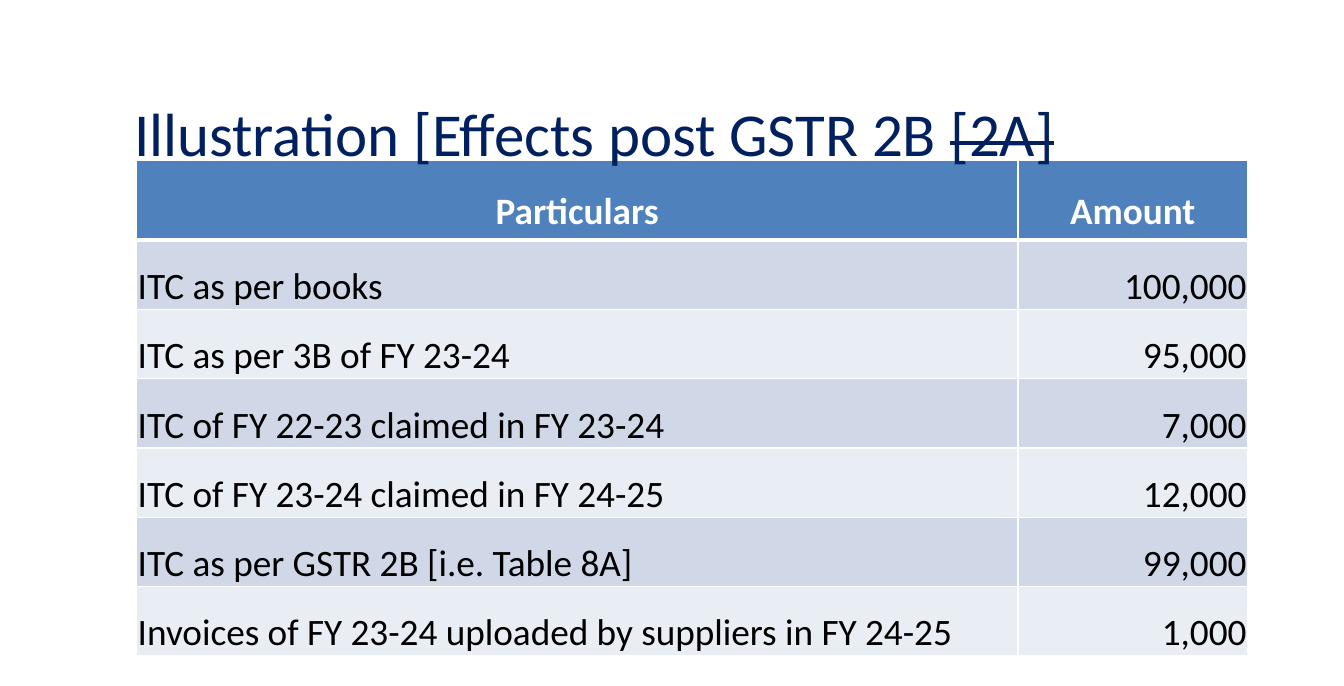
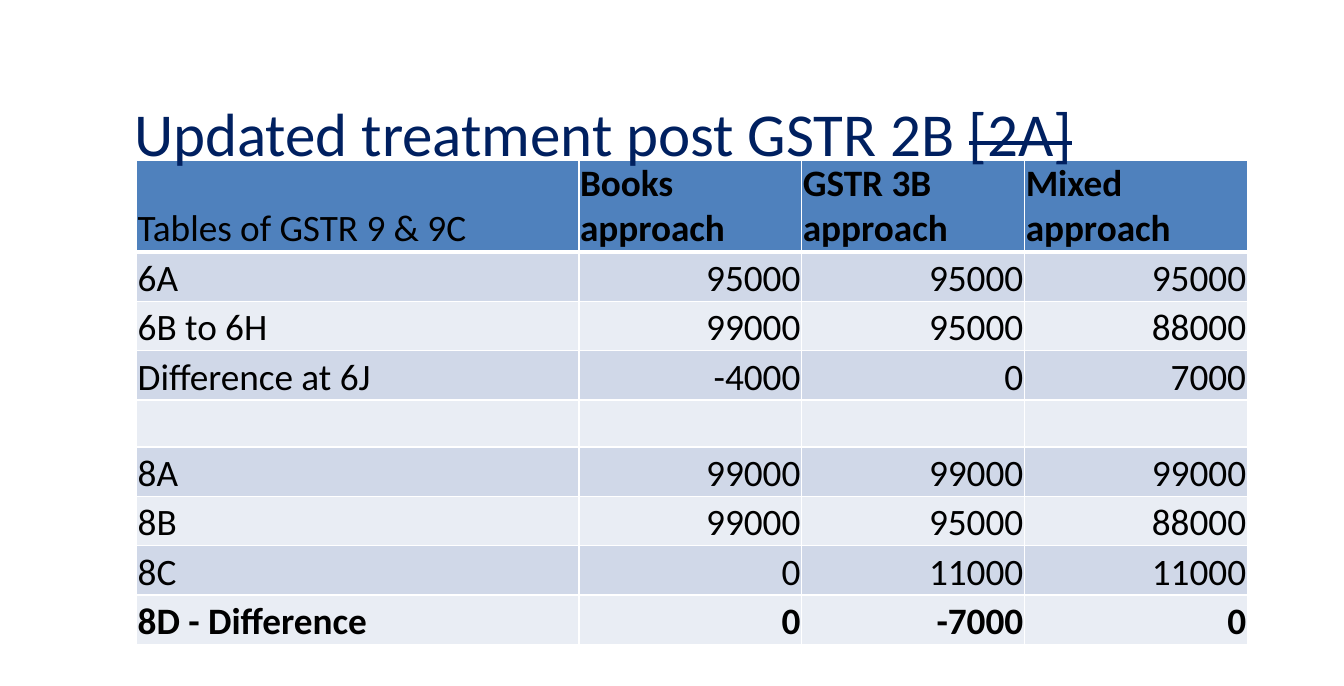
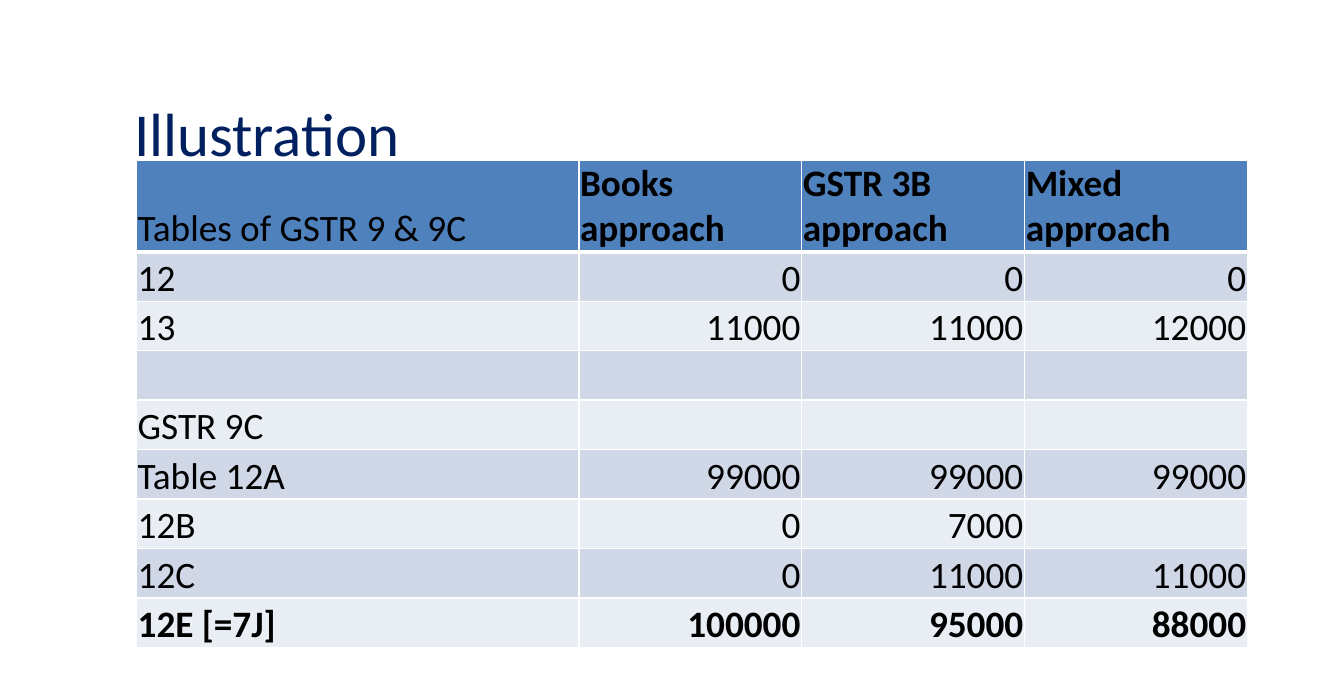
from lxml.etree import SubElement
from pptx import Presentation
from pptx.dml.color import RGBColor
from pptx.enum.text import MSO_ANCHOR, MSO_AUTO_SIZE, PP_ALIGN
from pptx.oxml.ns import qn
from pptx.util import Pt

NAVY = RGBColor(0x00, 0x20, 0x60)
BLUE = RGBColor(0x4F, 0x81, 0xBD)
BANDS = (RGBColor(0xD0, 0xD8, 0xE8), RGBColor(0xE9, 0xED, 0xF4))
WHITE = RGBColor(0xFF, 0xFF, 0xFF)
BLACK = RGBColor(0x00, 0x00, 0x00)

TITLE_ONLY = 5
ROW_HEIGHT = 29.2
AMOUNT_COLUMNS = (520.4, 135.8)
APPROACH_COLUMNS = (261.2, 131.6, 131.6, 131.6)
APPROACH_HEADER = ("Tables of GSTR 9 & 9C", "Books approach",
                   "GSTR 3B approach", "Mixed approach")


class Deck:
    """Holds the presentation style and the current slide."""

    font_name = "Calibri"
    title_size = 36
    cell_size = 22

    def __init__(self):
        self.presentation = Presentation()
        self.presentation.slide_width = Pt(793.6)
        self.presentation.slide_height = Pt(405)
        self.slide = None

    def add_slide(self, title, struck=""):
        layout = self.presentation.slide_layouts[TITLE_ONLY]
        self.slide = self.presentation.slides.add_slide(layout)
        shape = self.slide.shapes.title
        shape.left, shape.top = Pt(72), Pt(49.4)
        shape.width, shape.height = Pt(601), Pt(57)
        frame = shape.text_frame
        frame.auto_size = MSO_AUTO_SIZE.NONE
        frame.word_wrap = True
        frame.vertical_anchor = MSO_ANCHOR.MIDDLE
        paragraph = frame.paragraphs[0]
        paragraph.alignment = PP_ALIGN.LEFT
        self.add_run(paragraph, title, self.title_size, NAVY)
        if struck:
            run = self.add_run(paragraph, struck, self.title_size, NAVY)
            run.font._element.set("strike", "sngStrike")

    def add_run(self, paragraph, text, size, color, bold=False):
        run = paragraph.add_run()
        run.text = text
        run.font.name = self.font_name
        run.font.size = Pt(size)
        run.font.bold = bold
        run.font.color.rgb = color
        return run

    def add_table(self, column_widths, rows, row_heights):
        shape = self.slide.shapes.add_table(
            len(rows), len(column_widths), Pt(80.6), Pt(94.4),
            Pt(sum(column_widths)), Pt(sum(row_heights)))
        # The title overlaps the header row and stays in front
        self.slide.shapes.title._element.addprevious(shape._element)
        table = shape.table
        for column, width in zip(table.columns, column_widths):
            column.width = Pt(width)
        for row, height in zip(table.rows, row_heights):
            row.height = Pt(height)
        for index, row in enumerate(table.rows):
            for cell in row.cells:
                self.set_borders(cell, top=3 if index == 1 else 1,
                                 bottom=3 if index == 0 else 1)
                cell.fill.solid()
                cell.fill.fore_color.rgb = BANDS[(index - 1) % 2] if index else BLUE
        return table

    def set_borders(self, cell, top, bottom):
        properties = cell._tc.get_or_add_tcPr()
        for side, width in (("L", 1), ("R", 1), ("T", top), ("B", bottom)):
            line = SubElement(properties, qn(f"a:ln{side}"), w=str(Pt(width)))
            fill = SubElement(line, qn("a:solidFill"))
            SubElement(fill, qn("a:srgbClr"), val=str(WHITE))

    def fill_cell(self, cell, text, alignment, color=BLACK, bold=False,
                  line_spacing=None, tight=True):
        if tight:
            cell.vertical_anchor = MSO_ANCHOR.BOTTOM
            cell.margin_left = cell.margin_right = cell.margin_top = Pt(0.75)
            cell.margin_bottom = Pt(0)
        paragraph = cell.text_frame.paragraphs[0]
        paragraph.alignment = alignment
        if line_spacing:
            paragraph.line_spacing = line_spacing
        if text:
            self.add_run(paragraph, text, self.cell_size, color, bold)
        else:
            SubElement(paragraph._p, qn("a:endParaRPr"), sz=str(self.cell_size * 100))

    def add_amount_table(self, rows):
        table = self.add_table(AMOUNT_COLUMNS, rows, [ROW_HEIGHT] * len(rows))
        for index, texts in enumerate(rows):
            for column, text in enumerate(texts):
                cell = table.cell(index, column)
                if index == 0:
                    self.fill_cell(cell, text, PP_ALIGN.CENTER, WHITE, True, 1.5, False)
                else:
                    alignment = PP_ALIGN.RIGHT if column else PP_ALIGN.LEFT
                    self.fill_cell(cell, text, alignment, line_spacing=1.5)

    def add_approach_table(self, body, short_row=None):
        rows = [APPROACH_HEADER, *body]
        heights = [ROW_HEIGHT / 2 if index == short_row else ROW_HEIGHT
                   for index in range(len(rows))]
        table = self.add_table(APPROACH_COLUMNS, rows, heights)
        last = len(rows) - 1
        for index, texts in enumerate(rows):
            for column, text in enumerate(texts):
                is_number = index > 0 and column > 0
                alignment = PP_ALIGN.RIGHT if is_number else PP_ALIGN.LEFT
                bold = index == last or (index == 0 and column > 0)
                self.fill_cell(table.cell(index, column), text, alignment, bold=bold)


def main():
    deck = Deck()

    # Input figures
    deck.add_slide("Illustration [Effects post GSTR 2B ", "[2A]")
    deck.add_amount_table([
        ("Particulars", "Amount"),
        ("ITC as per books", "100,000"),
        ("ITC as per 3B of FY 23-24", "95,000"),
        ("ITC of FY 22-23 claimed in FY 23-24", "7,000"),
        ("ITC of FY 23-24 claimed in FY 24-25", "12,000"),
        ("ITC as per GSTR 2B [i.e. Table 8A]", "99,000"),
        ("Invoices of FY 23-24 uploaded by suppliers in FY 24-25", "1,000"),
    ])

    # Tables 6 and 8
    deck.add_slide("Updated treatment post GSTR 2B ", "[2A]")
    deck.add_approach_table([
        ("6A", "95000", "95000", "95000"),
        ("6B to 6H", "99000", "95000", "88000"),
        ("Difference at 6J", "-4000", "0", "7000"),
        ("", "", "", ""),
        ("8A", "99000", "99000", "99000"),
        ("8B", "99000", "95000", "88000"),
        ("8C", "0", "11000", "11000"),
        ("8D - Difference", "0", "-7000", "0"),
    ], short_row=4)

    # Tables 12 and 13, and GSTR 9C
    deck.add_slide("Illustration")
    deck.add_approach_table([
        ("12", "0", "0", "0"),
        ("13", "11000", "11000", "12000"),
        ("", "", "", ""),
        ("GSTR 9C", "", "", ""),
        ("Table 12A", "99000", "99000", "99000"),
        ("12B", "0", "7000", ""),
        ("12C", "0", "11000", "11000"),
        ("12E [=7J]", "100000", "95000", "88000"),
    ])

    deck.presentation.save("out.pptx")


if __name__ == "__main__":
    main()
